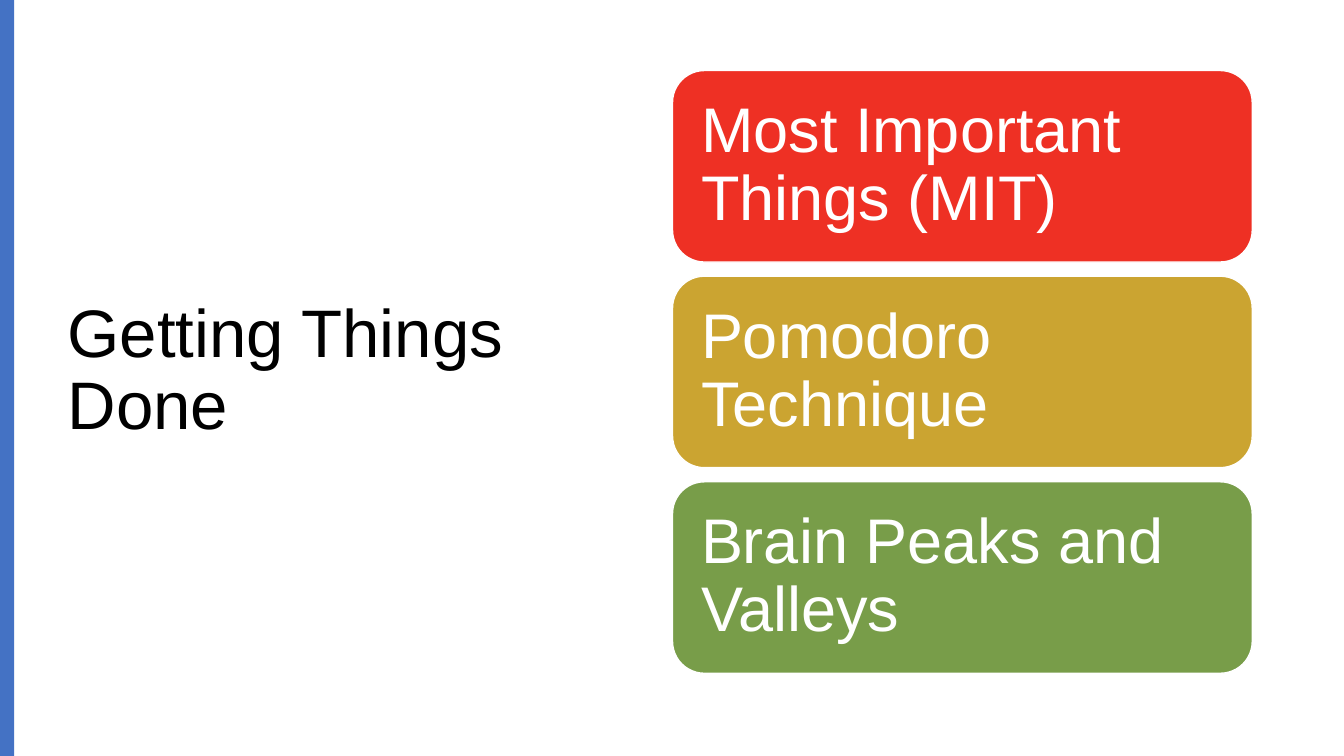
from dataclasses import dataclass

from pptx import Presentation
from pptx.dml.color import RGBColor
from pptx.enum.shapes import MSO_SHAPE
from pptx.enum.text import MSO_ANCHOR, MSO_AUTO_SIZE, PP_ALIGN
from pptx.util import Inches, Pt


@dataclass(frozen=True)
class Theme:
    font: str = "Arial"
    ink: RGBColor = RGBColor.from_string("000000")
    paper: RGBColor = RGBColor.from_string("FFFFFF")
    accent: RGBColor = RGBColor.from_string("4472C4")
    red: RGBColor = RGBColor.from_string("EE3024")
    gold: RGBColor = RGBColor.from_string("CBA431")
    green: RGBColor = RGBColor.from_string("789D49")
    title_size: Pt = Pt(48)
    card_size: Pt = Pt(45)
    outline: Pt = Pt(1)


THEME = Theme()
SLIDE_WIDTH, SLIDE_HEIGHT = 13.33, 7.5
TECHNIQUES = [
    ("Most Important Things (MIT)", THEME.red),
    ("Pomodoro Technique", THEME.gold),
    ("Brain Peaks and Valleys", THEME.green),
]


def set_values(target, values):
    for name, value in values.items():
        setattr(target, name, value)


def write_text(holder, wording, size, color, inset):
    frame = holder.text_frame
    frame.text = wording
    set_values(frame, {
        "word_wrap": True,
        "auto_size": MSO_AUTO_SIZE.NONE,
        "vertical_anchor": MSO_ANCHOR.MIDDLE,
        "margin_left": Inches(inset),
        "margin_right": Inches(inset),
        "margin_top": Inches(inset),
        "margin_bottom": Inches(inset),
    })
    paragraph = frame.paragraphs[0]
    set_values(paragraph, {"alignment": PP_ALIGN.LEFT, "line_spacing": 0.9})
    set_values(paragraph.font, {"name": THEME.font, "size": size})
    paragraph.font.color.rgb = color


def add_filled(slide, preset, box, color):
    panel = slide.shapes.add_shape(preset, *map(Inches, box))
    panel.shadow.inherit = False
    panel.fill.solid()
    panel.fill.fore_color.rgb = color
    panel.line.fill.background()
    return panel


def place_title(slide, box):
    title = slide.shapes.title
    set_values(title, dict(zip(("left", "top", "width", "height"), map(Inches, box))))
    write_text(title, "Getting Things Done", THEME.title_size, THEME.ink, 0.1)


def add_side_bar(slide, box):
    add_filled(slide, MSO_SHAPE.RECTANGLE, box, THEME.accent)


def add_technique_cards(slide, box, gap):
    left, top, width, height = box
    card_height = (height - gap * (len(TECHNIQUES) - 1)) / len(TECHNIQUES)
    for index, (technique, color) in enumerate(TECHNIQUES):
        card_top = top + index * (card_height + gap)
        card = add_filled(slide, MSO_SHAPE.ROUNDED_RECTANGLE,
                          (left, card_top, width, card_height), color)
        card.line.color.rgb = THEME.paper
        card.line.width = THEME.outline
        write_text(card, technique, THEME.card_size, THEME.paper, 0.19)


def main():
    deck = Presentation()
    set_values(deck, {"slide_width": Inches(SLIDE_WIDTH),
                      "slide_height": Inches(SLIDE_HEIGHT)})
    slide = deck.slides.add_slide(deck.slide_layouts.get_by_name("Title Only"))
    slide.background.fill.solid()
    slide.background.fill.fore_color.rgb = THEME.paper
    place_title(slide, (0.57, 0.68, 5.67, 6.02))
    add_side_bar(slide, (0, 0, 0.14, SLIDE_HEIGHT))
    add_technique_cards(slide, (6.67, 0.7, 5.75, 5.98), 0.14)
    deck.save("out.pptx")


if __name__ == "__main__":
    main()
